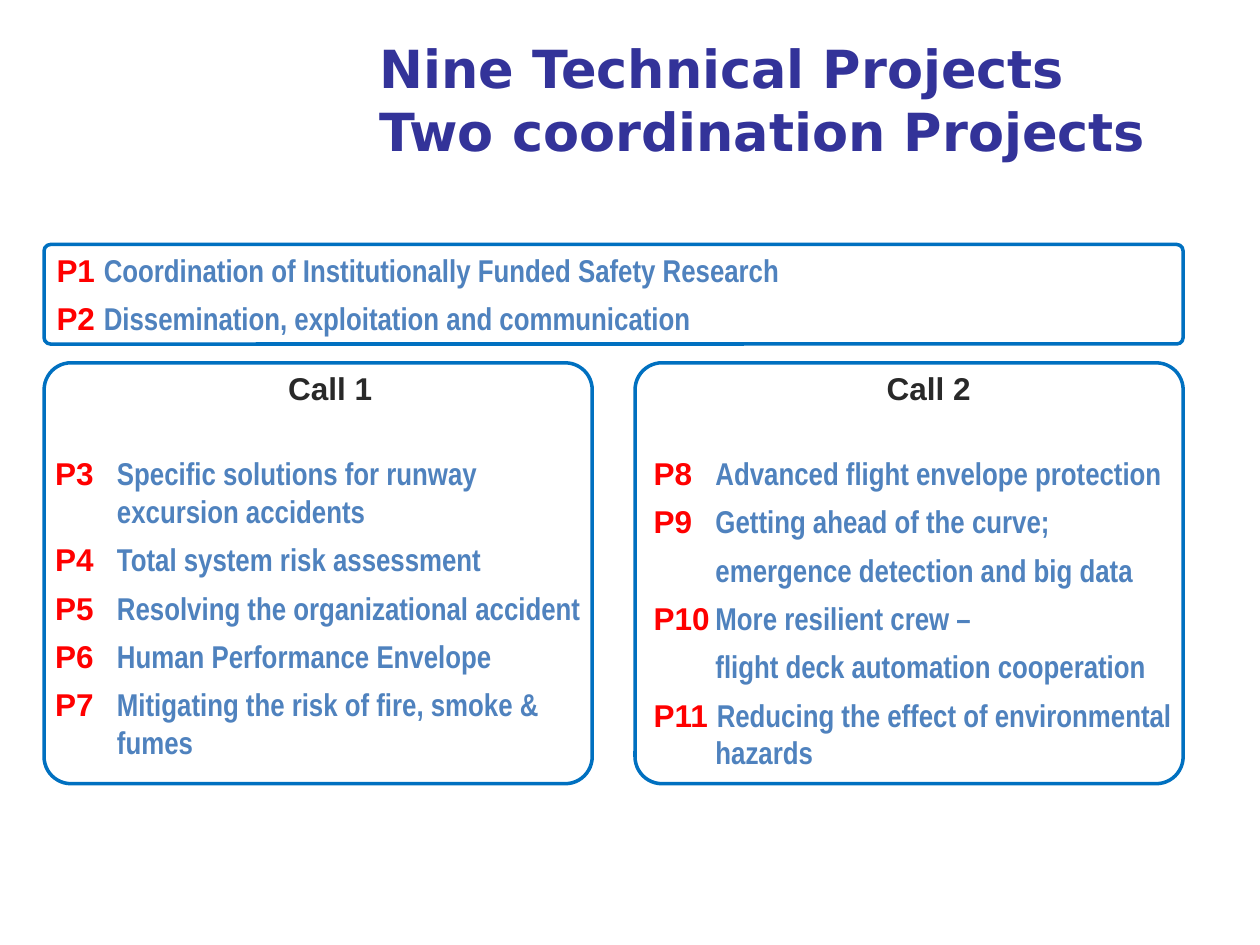
from pptx import Presentation
from pptx.dml.color import RGBColor
from pptx.enum.shapes import MSO_SHAPE
from pptx.enum.text import MSO_ANCHOR, PP_ALIGN
from pptx.util import Inches, Pt

TITLE = "Nine Technical Projects\vTwo coordination Projects"
NAVY, RED, BLUE, CHARCOAL, BORDER = "333399", "FF0000", "4F82BE", "292929", "0070C0"

# Each project: label, separator, description
COORDINATION = [
    ("P1", " ", "Coordination of Institutionally Funded Safety Research"),
    ("P2", " ", "Dissemination, exploitation and communication"),
]
CALL_1 = [
    ("P3", "\t", "Specific solutions for runway excursion accidents"),
    ("P4", "\t", "Total system risk assessment"),
    ("P5", "\t", "Resolving the organizational accident"),
    ("P6", "\t", "Human Performance Envelope"),
    ("P7", "\t", "Mitigating the risk of fire, smoke & fumes"),
]
CALL_2 = [
    ("P8", "\t", "Advanced flight envelope protection"),
    ("P9", "\t", "Getting ahead of the curve;"),
    ("", "\t", "emergence detection and big data"),
    ("P10", "\t", "More resilient crew –"),
    ("", "\t", "flight deck automation cooperation"),
    ("P11", " ", "Reducing the effect of environmental hazards"),
]

LEFT, RIGHT, GAP = 0.35, 9.39, 0.34
COLUMN = (RIGHT - LEFT - GAP) / 2
SECOND = LEFT + COLUMN + GAP
BAND_TOP, BAND_HEIGHT = 1.94, 0.79
CALL_TOP, CALL_HEIGHT = 2.88, 3.34
HANGING = 0.49

# Heading, projects, frame (left, top, width, height), text left, text width
PANELS = [
    (None, COORDINATION, (LEFT, BAND_TOP, RIGHT - LEFT, BAND_HEIGHT), LEFT, 9.29),
    ("Call 1", CALL_1, (LEFT, CALL_TOP, COLUMN, CALL_HEIGHT), LEFT - 0.01, 4.56),
    ("Call 2", CALL_2, (SECOND, CALL_TOP, COLUMN, CALL_HEIGHT), SECOND + 0.05, 4.56),
]


def style(font, name, size, color):
    font.name, font.size, font.bold = name, Pt(size), True
    font.color.rgb = RGBColor.from_string(color)


def add_span(para, text, name, color):
    span = para.add_run()
    span.text = text
    style(span.font, name, 18, color)


def add_title(page):
    title = page.shapes.title
    title.left, title.top, title.width, title.height = map(Inches, (2.91, 0.28, 6.6, 1.02))
    frame = title.text_frame
    frame.text = TITLE
    frame.vertical_anchor = MSO_ANCHOR.MIDDLE
    para = frame.paragraphs[0]
    para.alignment = PP_ALIGN.LEFT
    for span in para.runs:
        style(span.font, "DejaVu Sans", 30, NAVY)


def add_project_text(page, heading, projects, area):
    box = page.shapes.add_textbox(*map(Inches, area))
    frame = box.text_frame
    frame.word_wrap = True
    para = frame.paragraphs[0]
    if heading:
        para.alignment = PP_ALIGN.CENTER
        para.space_after = Pt(21)
        add_span(para, heading, "Arial", CHARCOAL)
    for number, (label, separator, description) in enumerate(projects):
        if heading or number:
            para = frame.add_paragraph()
            para.space_before = Pt(6)
        properties = para._p.get_or_add_pPr()
        properties.set("marL", str(Inches(HANGING)))
        properties.set("indent", str(-Inches(HANGING)))
        add_span(para, label + separator, "Arial", RED)
        add_span(para, description, "Arial Narrow", BLUE)


def add_frame(page, area):
    frame = page.shapes.add_shape(MSO_SHAPE.ROUNDED_RECTANGLE, *map(Inches, area))
    frame.adjustments[0] = 0.064
    frame.shadow.inherit = False
    frame.fill.background()
    frame.line.color.rgb = RGBColor.from_string(BORDER)
    frame.line.width = Pt(2)


def main():
    deck = Presentation()
    deck.slide_width, deck.slide_height = Inches(10), Inches(7.5)
    page = deck.slides.add_slide(deck.slide_layouts[5])
    add_title(page)
    for heading, projects, area, text_left, text_width in PANELS:
        add_project_text(page, heading, projects, (text_left, area[1], text_width, area[3]))
        add_frame(page, area)
    deck.save("out.pptx")


if __name__ == "__main__":
    main()
